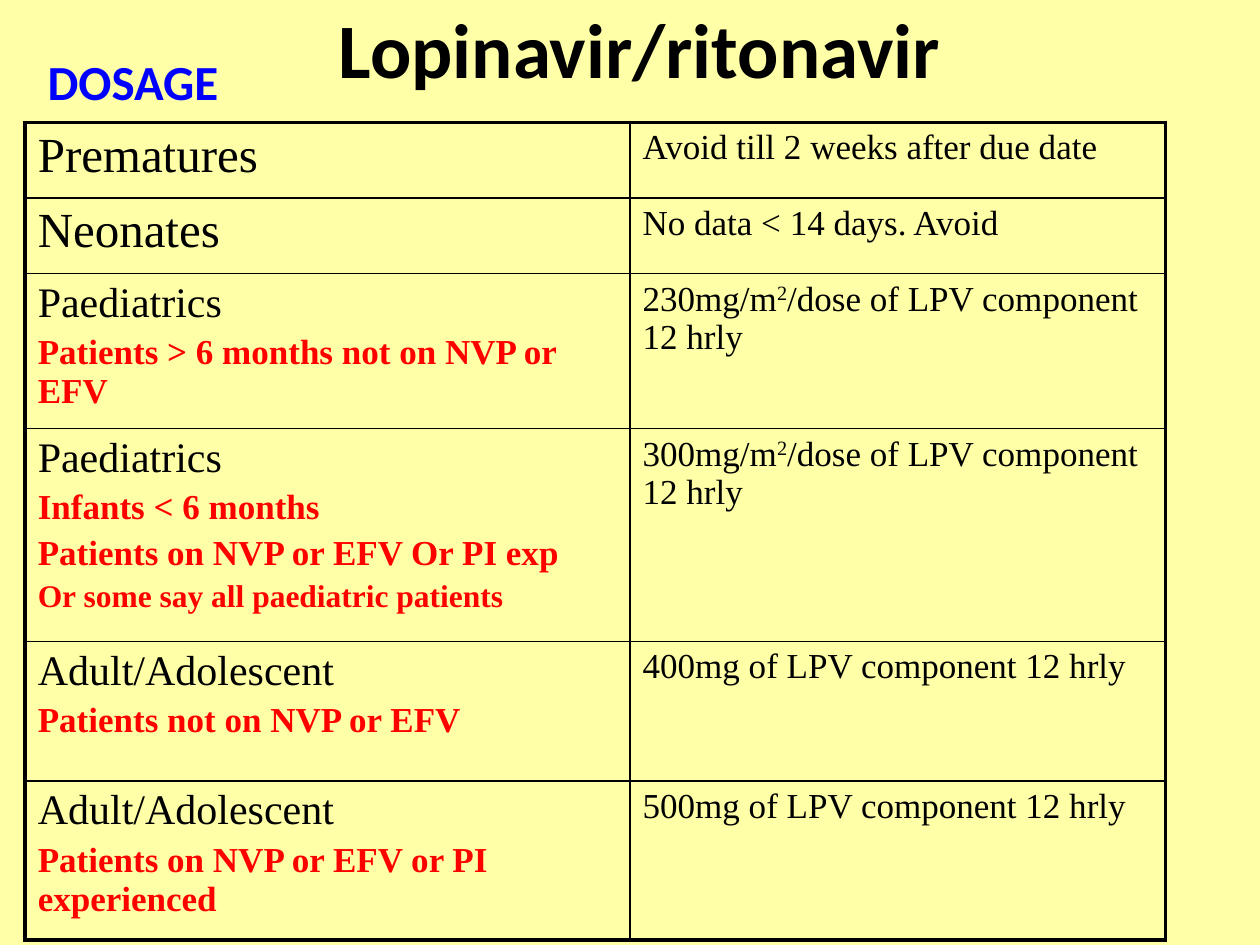
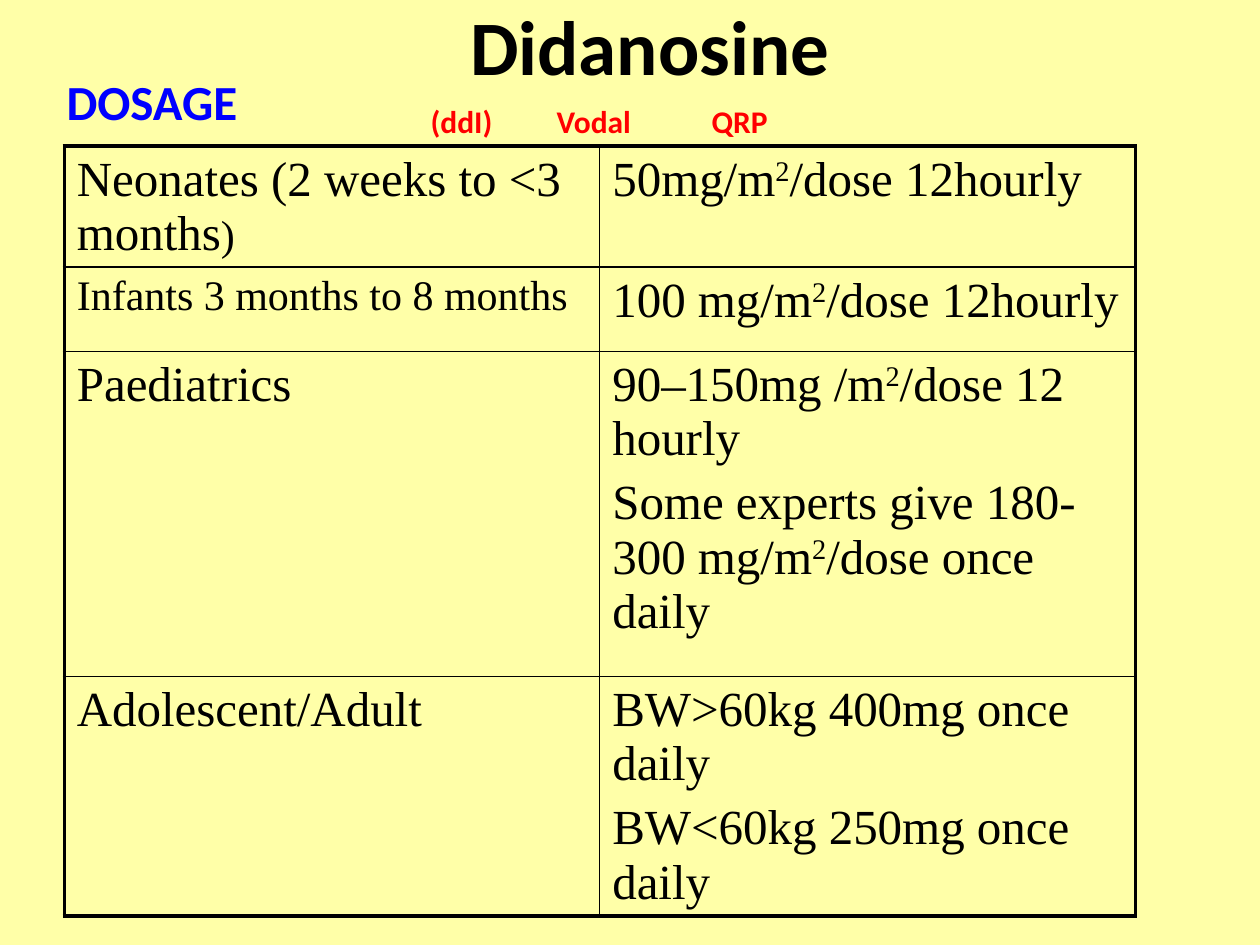
from lxml.etree import SubElement
from pptx import Presentation
from pptx.dml.color import RGBColor
from pptx.enum.text import MSO_ANCHOR, MSO_AUTO_SIZE, PP_ALIGN
from pptx.oxml import parse_xml
from pptx.oxml.ns import nsdecls, qn
from pptx.util import Inches, Pt

COLORS = {"paper": "FFFFA8", "ink": "000000", "label": "0000FF", "note": "FF0000"}
HEADING_FONT, BODY_FONT = "Calibri", "Times New Roman"
OUTER_LINE, INNER_LINE = 2.25, 1


def plain(text, size):
    return text, size, "ink", False


def note(text, size=20):
    return text, size, "note", True


class DosageDeck:
    def __init__(self):
        self.deck = Presentation()
        self.deck.slide_width, self.deck.slide_height = Inches(10), Inches(7.5)
        self.slide = None
        fill = self.deck.slide_master.background.fill
        fill.solid()
        fill.fore_color.rgb = RGBColor.from_string(COLORS["paper"])

    def add_text(self, paragraph, text, size, color, bold, face, before=0):
        for position, part in enumerate(text.split("^")):
            run = paragraph.add_run()
            run.text = part
            if position % 2:
                run._r.get_or_add_rPr().set("baseline", "30000")
        for font in (paragraph.font, *(run.font for run in paragraph.runs)):
            font.name, font.size, font.bold = face, Pt(size), bold
            font.color.rgb = RGBColor.from_string(COLORS[color])
        if before:
            paragraph._p.get_or_add_pPr().insert(0, parse_xml(
                f'<a:spcBef {nsdecls("a")}><a:spcPct val="{before * 1000}"/></a:spcBef>'))

    def title(self, text, left, top):
        self.slide = self.deck.slides.add_slide(self.deck.slide_layouts[5])
        title = self.slide.shapes.title
        title.left, title.top = Inches(left), Inches(top)
        title.width, title.height = Inches(8.5), Inches(1.25)
        frame = title.text_frame
        frame.vertical_anchor = MSO_ANCHOR.MIDDLE
        frame.paragraphs[0].alignment = PP_ALIGN.CENTER
        self.add_text(frame.paragraphs[0], text, 44, "ink", True, HEADING_FONT)

    def label(self, text, left, top, width, height, size, color, before=0, tabs=()):
        box = self.slide.shapes.add_textbox(
            Inches(left), Inches(top), Inches(width), Inches(height))
        frame = box.text_frame
        frame.word_wrap = True
        frame.auto_size = MSO_AUTO_SIZE.SHAPE_TO_FIT_TEXT
        paragraph = frame.paragraphs[0]
        if tabs:
            stops = SubElement(paragraph._p.get_or_add_pPr(), qn("a:tabLst"))
            for tab in tabs:
                SubElement(stops, qn("a:tab"), pos=str(Inches(tab)), algn="l")
        self.add_text(paragraph, text, size, color, True, HEADING_FONT, before)

    def dosage(self, left, top, width):
        self.label("DOSAGE", left, top, width, 0.57, 28, "label", before=50)

    def table(self, left, top, height, widths, heights, rows):
        holder = self.slide.shapes.add_table(
            len(rows), len(widths), Inches(left), Inches(top),
            Inches(sum(widths)), Inches(height))
        table = holder.table
        table.first_row = table.horz_banding = False
        for column, width in zip(table.columns, widths):
            column.width = Inches(width)
        for row, row_height in zip(table.rows, heights):
            row.height = Inches(row_height)
        holder.height = Inches(height)
        for r, row in enumerate(rows):
            for c, lines in enumerate(row):
                cell = table.cell(r, c)
                cell.fill.background()
                self.borders(cell, {"lnL": c == 0, "lnR": c == len(widths) - 1,
                                    "lnT": r == 0, "lnB": r == len(rows) - 1})
                frame = cell.text_frame
                for position, line in enumerate(lines):
                    paragraph = frame.add_paragraph() if position else frame.paragraphs[0]
                    self.add_text(paragraph, *line, BODY_FONT, before=20)
        return table

    def borders(self, cell, outer_sides):
        properties = cell._tc.get_or_add_tcPr()
        for position, (side, outer) in enumerate(outer_sides.items()):
            width = Pt(OUTER_LINE if outer else INNER_LINE)
            properties.insert(position, parse_xml(
                f'<a:{side} {nsdecls("a")} w="{width}"><a:solidFill>'
                f'<a:srgbClr val="{COLORS["ink"]}"/></a:solidFill></a:{side}>'))


def lopinavir(deck):
    deck.title("Lopinavir/ritonavir", 0.83, -0.25)
    deck.dosage(0.28, 0.36, 5.92)
    groups = [
        [plain("Prematures", 28)],
        [plain("Neonates", 28)],
        [plain("Paediatrics", 24), note("Patients > 6 months not on NVP or EFV")],
        [plain("Paediatrics", 24), note("Infants < 6 months"),
         note("Patients on NVP or EFV Or PI exp"),
         note("Or some say all paediatric patients", 18)],
        [plain("Adult/Adolescent", 24), note("Patients not on NVP or EFV")],
        [plain("Adult/Adolescent", 24), note("Patients on NVP or EFV or PI experienced")],
    ]
    doses = [
        "Avoid till 2 weeks after due date",
        "No data < 14 days. Avoid",
        "230mg/m^2^/dose of LPV component 12 hrly",
        "300mg/m^2^/dose of LPV component 12 hrly",
        "400mg of LPV component 12 hrly",
        "500mg of LPV component 12 hrly",
    ]
    rows = [(group, [plain(dose, 20)]) for group, dose in zip(groups, doses)]
    deck.table(0.2, 0.97, 6.48, [4.8, 4.25], [0.6, 0.6, 1.23, 1.69, 1.11, 1.26], rows)


def didanosine(deck):
    deck.title("Didanosine", 0.91, -0.27)
    groups = [
        ("Neonates (2 weeks to <3 months", 28, ["50mg/m^2^/dose 12hourly"]),
        ("Infants 3 months to 8 months", 24, ["100 mg/m^2^/dose 12hourly"]),
        ("Paediatrics", 28, ["90–150mg /m^2^/dose 12 hourly",
                             "Some experts give 180-300 mg/m^2^/dose once daily"]),
        ("Adolescent/Adult", 28, ["BW>60kg 400mg once daily",
                                  "BW<60kg 250mg once daily"]),
    ]
    rows = [([plain(group, size)], [plain(dose, 28) for dose in doses])
            for group, size, doses in groups]
    table = deck.table(0.51, 1.16, 6.34, [4.25, 4.25], [0.67, 0.67, 2.58, 1.33], rows)
    neonates = table.cell(0, 0).text_frame.paragraphs[0]
    deck.add_text(neonates, ")", 24, "ink", False, BODY_FONT)
    neonates.runs[0].font.size = Pt(28)
    deck.dosage(0.43, 0.52, 2.17)
    deck.label("\t(ddI)\tVodal\tQRP", 2.32, 0.76, 7.6, 0.5, 18, "note", tabs=(1, 2, 3.23))


def main():
    deck = DosageDeck()
    lopinavir(deck)
    didanosine(deck)
    deck.deck.save("out.pptx")


if __name__ == "__main__":
    main()
